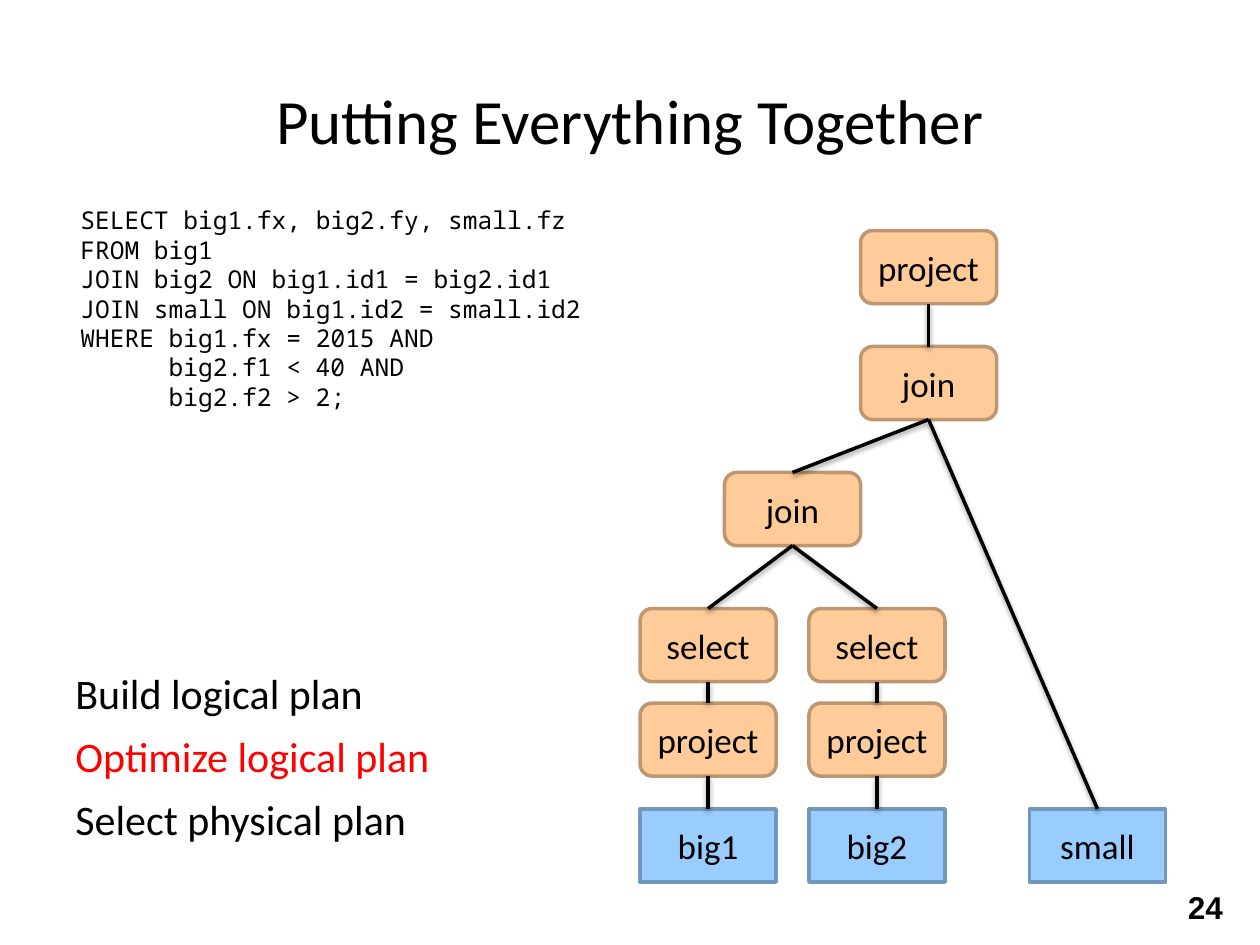
from dataclasses import dataclass

from lxml import etree
from pptx import Presentation
from pptx.dml.color import RGBColor
from pptx.enum import shapes, text
from pptx.oxml import ns
from pptx.util import Inches, Pt


@dataclass(frozen=True)
class Theme:
    ink: str = "000000"
    accent: str = "FF0000"
    operator_fill: str = "FFCC99"
    operator_line: str = "BD9771"
    table_fill: str = "99CCFF"
    table_line: str = "7197BD"
    sans: str = "Calibri"
    mono: str = "Noto Sans Mono"
    number_font: str = "Arial"
    title_size: int = 36
    step_size: int = 24
    node_size: int = 20
    number_size: int = 18
    code_size: int = 14
    line_width: int = 2


THEME = Theme()
BOTTOM, TOP = 2, 0
NODE_SIZE = (1.08, 0.58)

QUERY = [
    "SELECT big1.fx, big2.fy, small.fz",
    "FROM big1",
    "JOIN big2 ON big1.id1 = big2.id1",
    "JOIN small ON big1.id2 = small.id2",
    "WHERE big1.fx = 2015 AND\vbig2.f1 < 40 AND\vbig2.f2 > 2;",
]
STEPS = [
    ("Build logical plan", 3.25, THEME.ink),
    ("Optimize logical plan", 4.08, THEME.accent),
    ("Select physical plan", 3.58, THEME.ink),
]

# key: (label, left, top), relative to the plan's box
OPERATORS = {
    "root": ("project", 1.75, 0),
    "outer join": ("join", 1.75, 0.92),
    "inner join": ("join", 0.67, 1.92),
    "select1": ("select", 0, 3),
    "select2": ("select", 1.34, 3),
    "project1": ("project", 0, 3.75),
    "project2": ("project", 1.34, 3.75),
}
TABLES = {
    "big1": ("big1", 0, 4.59),
    "big2": ("big2", 1.34, 4.59),
    "small": ("small", 3.09, 4.59),
}
INPUTS = [
    ("root", "outer join"),
    ("outer join", "inner join"),
    ("outer join", "small"),
    ("inner join", "select1"),
    ("inner join", "select2"),
    ("select1", "project1"),
    ("select2", "project2"),
    ("project1", "big1"),
    ("project2", "big2"),
]


def rgb(value):
    return RGBColor.from_string(value)


def write(shape, lines, size, font=THEME.sans, color=THEME.ink, bold=False,
          align=text.PP_ALIGN.LEFT, anchor=text.MSO_ANCHOR.TOP, wrap=True, hanging=0):
    """Fill a shape with one paragraph per line; hanging is the indent of wrapped lines."""
    frame = shape.text_frame
    frame.text = "\n".join(lines)
    frame.word_wrap = wrap
    frame.vertical_anchor = anchor
    for paragraph in frame.paragraphs:
        paragraph.alignment = align
        if hanging:
            properties = paragraph._p.get_or_add_pPr()
            properties.set("marL", str(Inches(hanging)))
            properties.set("indent", str(-Inches(hanging)))
        for run in paragraph.runs:
            run.font.name = font
            run.font.size = Pt(size)
            run.font.bold = bold
            run.font.color.rgb = rgb(color)


def add_text(slide, box, lines, size, **style):
    label = slide.shapes.add_textbox(*map(Inches, box))
    write(label, lines, size, **style)


def add_node(slide, kind, box, label, fill, outline):
    node = slide.shapes.add_shape(kind, *map(Inches, box))
    node.shadow.inherit = False
    node.fill.solid()
    node.fill.fore_color.rgb = rgb(fill)
    node.line.color.rgb = rgb(outline)
    node.line.width = Pt(THEME.line_width)
    write(node, [label], THEME.node_size, align=text.PP_ALIGN.CENTER,
          anchor=text.MSO_ANCHOR.MIDDLE)
    return node


def add_soft_shadow(connector):
    effects = etree.SubElement(connector._element.spPr, ns.qn("a:effectLst"))
    shadow = etree.SubElement(effects, ns.qn("a:outerShdw"), blurRad=str(Pt(3.1)),
                              dist=str(Pt(1.6)), dir="5400000", rotWithShape="0")
    color = etree.SubElement(shadow, ns.qn("a:srgbClr"), val=THEME.ink)
    etree.SubElement(color, ns.qn("a:alpha"), val="38000")


def add_edge(slide, parent, child):
    edge = slide.shapes.add_connector(shapes.MSO_CONNECTOR.STRAIGHT, 0, 0, 0, 0)
    edge.begin_connect(child, TOP)
    edge.end_connect(parent, BOTTOM)
    edge.line.color.rgb = rgb(THEME.ink)
    edge.line.width = Pt(THEME.line_width)
    add_soft_shadow(edge)


def add_plan(slide, left, top):
    """Draw the query tree, operators above the tables they read."""
    groups = [
        (OPERATORS, shapes.MSO_SHAPE.ROUNDED_RECTANGLE,
         THEME.operator_fill, THEME.operator_line),
        (TABLES, shapes.MSO_SHAPE.RECTANGLE, THEME.table_fill, THEME.table_line),
    ]
    nodes = {}
    for group, kind, fill, outline in groups:
        for key, (label, x, y) in group.items():
            box = (left + x, top + y, *NODE_SIZE)
            nodes[key] = add_node(slide, kind, box, label, fill, outline)
    for parent, child in INPUTS:
        add_edge(slide, nodes[parent], nodes[child])


def add_steps(slide, left, top, pitch):
    for row, (step, width, color) in enumerate(STEPS):
        add_text(slide, (left, top + row * pitch, width, pitch), [step],
                 THEME.step_size, color=color)


def main():
    deck = Presentation()
    deck.slide_width, deck.slide_height = Inches(10), Inches(7.5)
    slide = deck.slides.add_slide(deck.slide_layouts[6])
    add_text(slide, (0, 0.6, 10, 0.75), ["Putting Everything Together"],
             THEME.title_size, align=text.PP_ALIGN.CENTER)
    add_text(slide, (0.54, 1.58, 4.21, 1.75), QUERY, THEME.code_size,
             font=THEME.mono, wrap=False, hanging=0.7)
    add_plan(slide, left=5.08, top=1.83)
    add_steps(slide, left=0.5, top=5.25, pitch=0.5)
    add_text(slide, (9.33, 7, 0.58, 0.4), ["24"], THEME.number_size,
             font=THEME.number_font, bold=True)
    deck.save("out.pptx")


if __name__ == "__main__":
    main()
